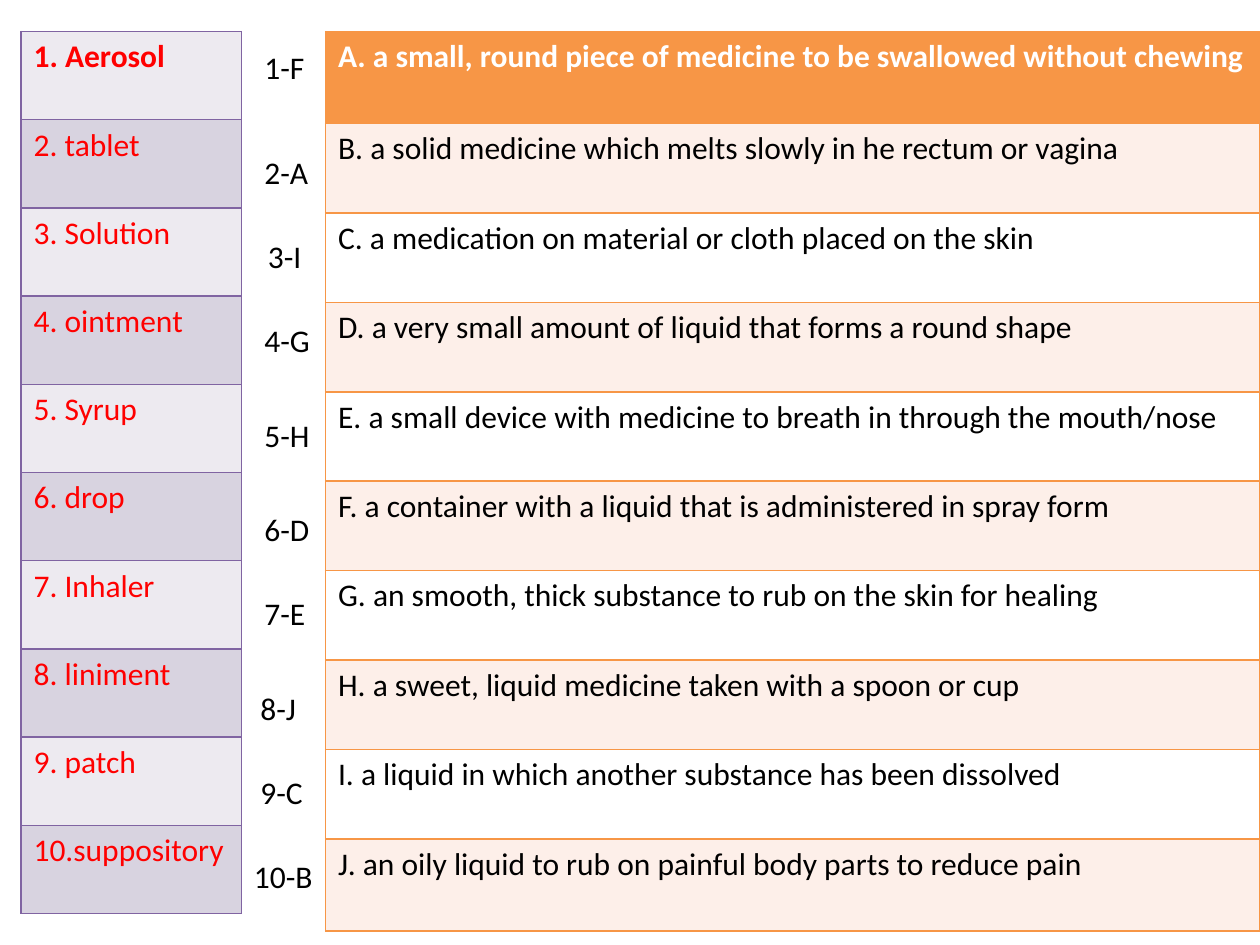
from lxml.etree import SubElement
from pptx import Presentation
from pptx.dml.color import RGBColor
from pptx.enum.text import MSO_AUTO_SIZE
from pptx.oxml.ns import qn
from pptx.util import Inches, Pt

"""Build a matching exercise: medicine forms, answers and definitions."""


def style_text(paragraph, color, bold=False):
    font = paragraph.font
    for run in paragraph.runs:
        font = run.font
        font.name, font.size, font.bold = "Calibri", Pt(18), bold
        font.color.rgb = RGBColor.from_string(color)


def style_cell(cell, fill, border):
    properties = cell._tc.get_or_add_tcPr()
    for side in ("lnL", "lnR", "lnT", "lnB"):
        line = SubElement(properties, qn(f"a:{side}"), w=str(Pt(1)))
        SubElement(SubElement(line, qn("a:solidFill")), qn("a:srgbClr"), val=border)
    cell.fill.solid()
    cell.fill.fore_color.rgb = RGBColor.from_string(fill)


presentation = Presentation()
presentation.slide_width, presentation.slide_height = Inches(10), Inches(7.5)
slide = presentation.slides.add_slide(presentation.slide_layouts[6])
column = presentation.slide_width // 120
row = presentation.slide_height // 90

terms = ["1. Aerosol", "2. tablet", "3. Solution", "4. ointment", "5. Syrup",
         "6. drop", "7. Inhaler", "8. liniment", "9. patch", "10.suppository"]
definitions = [
    "A. a small, round piece of medicine to be swallowed without chewing",
    "B. a solid medicine which melts slowly in he rectum or vagina",
    "C. a medication on material or cloth placed on the skin",
    "D. a very small amount of liquid that forms a round shape",
    "E. a small device with medicine to breath in through the mouth/nose",
    "F. a container with a liquid that is administered in spray form",
    "G. an smooth, thick substance to rub on the skin for healing",
    "H. a sweet, liquid medicine taken with a spoon or cup",
    "I. a liquid in which another substance has been dissolved",
    "J. an oily liquid to rub on painful body parts to reduce pain",
]
term_heights = [0.7] * 10
definition_heights = [0.73] + [0.71] * 8 + [0.73]
term_fills = ["EDEAF0", "D8D3E0"] * 5
definition_fills = ["F79646"] + ["FDEFE9", "FFFFFF"] * 4 + ["FDEFE9"]
term_colors = ["FF0000"] * 10
definition_colors = ["FFFFFF"] + ["000000"] * 9

for left, width, border, texts, heights, fills, colors in [
    (2, 21, "8064A2", terms, term_heights, term_fills, term_colors),
    (31, 89, "F79646", definitions, definition_heights, definition_fills, definition_colors),
]:
    frame = slide.shapes.add_table(len(texts), 1, left * column, 3 * row,
                                   width * column, Inches(sum(heights)))
    table = frame.table
    for index, text in enumerate(texts):
        table.rows[index].height = Inches(heights[index])
        cell = table.cell(index, 0)
        cell.text_frame.text = text
        style_cell(cell, fills[index], border)
        style_text(cell.text_frame.paragraphs[0], colors[index], bold=index == 0)

answers = [
    ("1-F", 24, 4, 7, 0.1), ("2-A", 24, 14, 7, 0.1), ("3-I", 23, 22, 7, 0.21),
    ("4-G", 24, 30, 7, 0.1), ("5-H", 24, 39, 7, 0.1), ("6-D", 24, 48, 7, 0.1),
    ("7-E", 24, 56, 7, 0.1), ("8-J", 23, 65, 8, 0.15), ("9-C", 23, 73, 8, 0.15),
    ("10-B", 23, 81, 8, 0.1),
]
for text, left, top, width, indent in answers:
    shape = slide.shapes.add_textbox(left * column, top * row, width * column, Inches(0.4))
    text_frame = shape.text_frame
    text_frame.word_wrap = True
    text_frame.auto_size = MSO_AUTO_SIZE.SHAPE_TO_FIT_TEXT
    text_frame.margin_left, text_frame.margin_right = Inches(indent), Inches(0.05)
    text_frame.text = text
    style_text(text_frame.paragraphs[0], "000000")

presentation.save("out.pptx")
